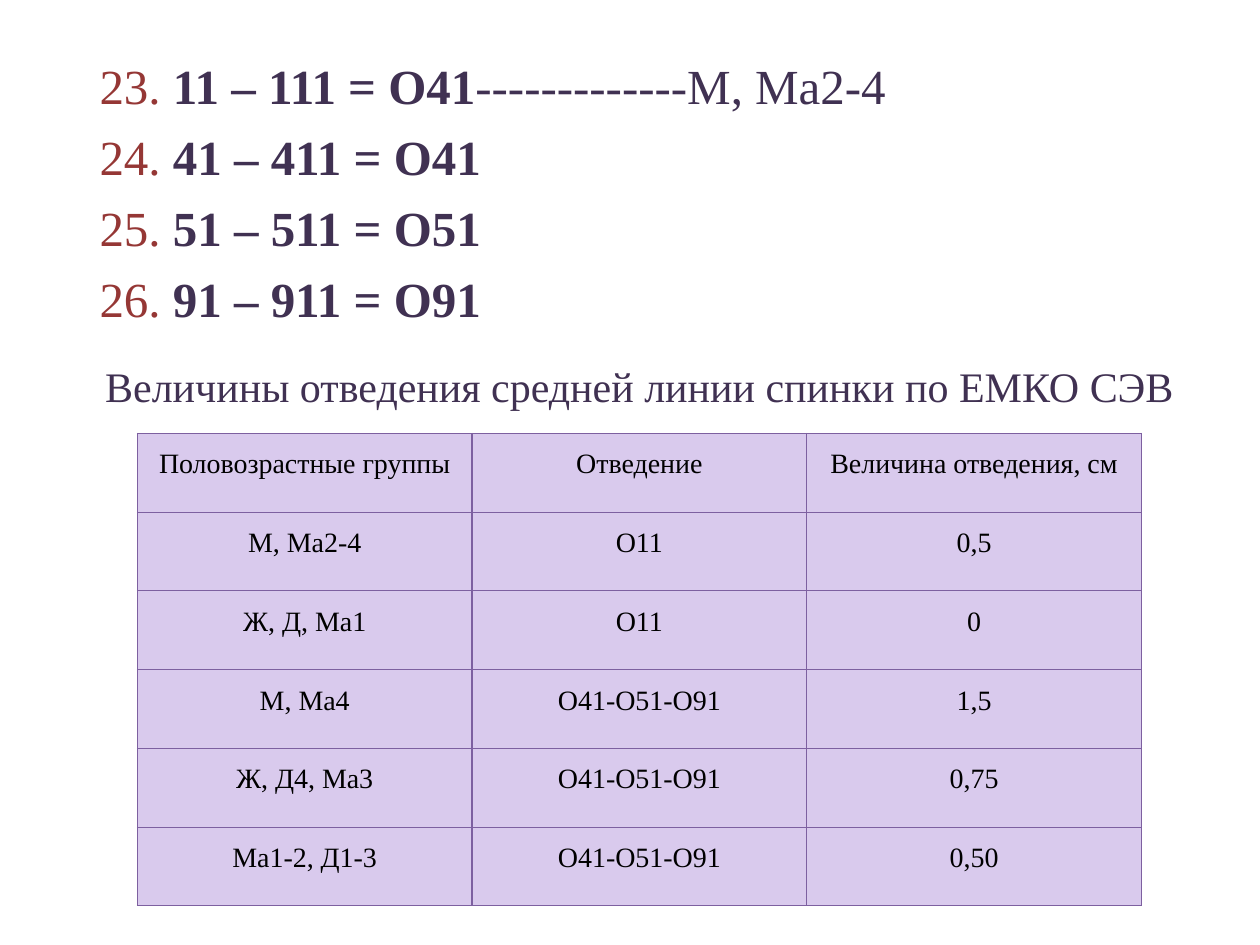
from lxml import etree
from pptx import Presentation
from pptx.dml.color import RGBColor
from pptx.enum import text
from pptx.oxml import ns
from pptx.util import Inches, Pt

FONT = "Times New Roman"
RED = RGBColor(0x95, 0x37, 0x35)
PURPLE = RGBColor(0x40, 0x31, 0x52)
BLACK = RGBColor(0, 0, 0)
CELL_FILL = RGBColor(0xD9, 0xCA, 0xED)
BORDER = RGBColor(0x7D, 0x60, 0xA0)


def set_border(cell, color, width):
    properties = cell._tc.get_or_add_tcPr()
    for position, side in enumerate(("lnL", "lnR", "lnT", "lnB")):
        line = etree.Element(ns.qn(f"a:{side}"), w=str(width))
        fill = etree.SubElement(line, ns.qn("a:solidFill"))
        etree.SubElement(fill, ns.qn("a:srgbClr"), val=str(color))
        properties.insert(position, line)


presentation = Presentation()
presentation.slide_width = Inches(10)
presentation.slide_height = Inches(7.5)
slide = presentation.slides.add_slide(presentation.slide_layouts[6])

# Numbered formulas
formulas = [
    ("23. ", "11 – 111 = О41", "-------------М, Ма2-4"),
    ("24. ", "41 – 411 = О41", ""),
    ("25. ", "51 – 511 = О51", ""),
    ("26. ", "91 – 911 = О91", ""),
]
formula_box = slide.shapes.add_textbox(Inches(0.31), Inches(0.39), Inches(8.98), Inches(2.89))
frame = formula_box.text_frame
frame.word_wrap = True
frame.margin_left = Inches(0.48)
for index, (number, formula, groups) in enumerate(formulas):
    paragraph = frame.add_paragraph() if index else frame.paragraphs[0]
    paragraph.space_before = Pt(7)
    paragraph.font.name = FONT
    paragraph.font.size = Pt(28)
    for words, color, bold in ((number, RED, False), (formula, PURPLE, True), (groups, PURPLE, False)):
        if words:
            run = paragraph.add_run()
            run.text = words
            run.font.color.rgb = color
            run.font.bold = bold

# Table of offsets
rows = [
    ("Половозрастные группы", "Отведение", "Величина отведения, см"),
    ("М, Ма2-4", "О11", "0,5"),
    ("Ж, Д, Ма1", "О11", "0"),
    ("М, Ма4", "О41-О51-О91", "1,5"),
    ("Ж, Д4, Ма3", "О41-О51-О91", "0,75"),
    ("Ма1-2, Д1-3", "О41-О51-О91", "0,50"),
]
table = slide.shapes.add_table(
    len(rows), len(rows[0]), Inches(1.09), Inches(3.44), Inches(7.97), Inches(3.75)
).table
for row_index, row in enumerate(rows):
    for column_index, words in enumerate(row):
        cell = table.cell(row_index, column_index)
        cell.text = words
        cell.fill.solid()
        cell.fill.fore_color.rgb = CELL_FILL
        cell.margin_left = cell.margin_right = Inches(0.07)
        cell.margin_top = cell.margin_bottom = 0
        set_border(cell, BORDER, Pt(0.75))
        paragraph = cell.text_frame.paragraphs[0]
        paragraph.alignment = text.PP_ALIGN.CENTER
        paragraph.line_spacing = 1.5
        paragraph.font.name = FONT
        paragraph.font.size = Pt(16)
        paragraph.font.bold = False
        paragraph.font.color.rgb = BLACK

# Table heading
heading_box = slide.shapes.add_textbox(Inches(0.23), Inches(2.81), Inches(9.2), Inches(0.5))
frame = heading_box.text_frame
frame.word_wrap = True
frame.vertical_anchor = text.MSO_ANCHOR.MIDDLE
frame.margin_left = Inches(0.59)
paragraph = frame.paragraphs[0]
paragraph.text = "Величины отведения средней линии спинки по ЕМКО СЭВ"
paragraph.alignment = text.PP_ALIGN.CENTER
paragraph.font.name = FONT
paragraph.font.size = Pt(24)
paragraph.font.color.rgb = PURPLE

presentation.save("out.pptx")
